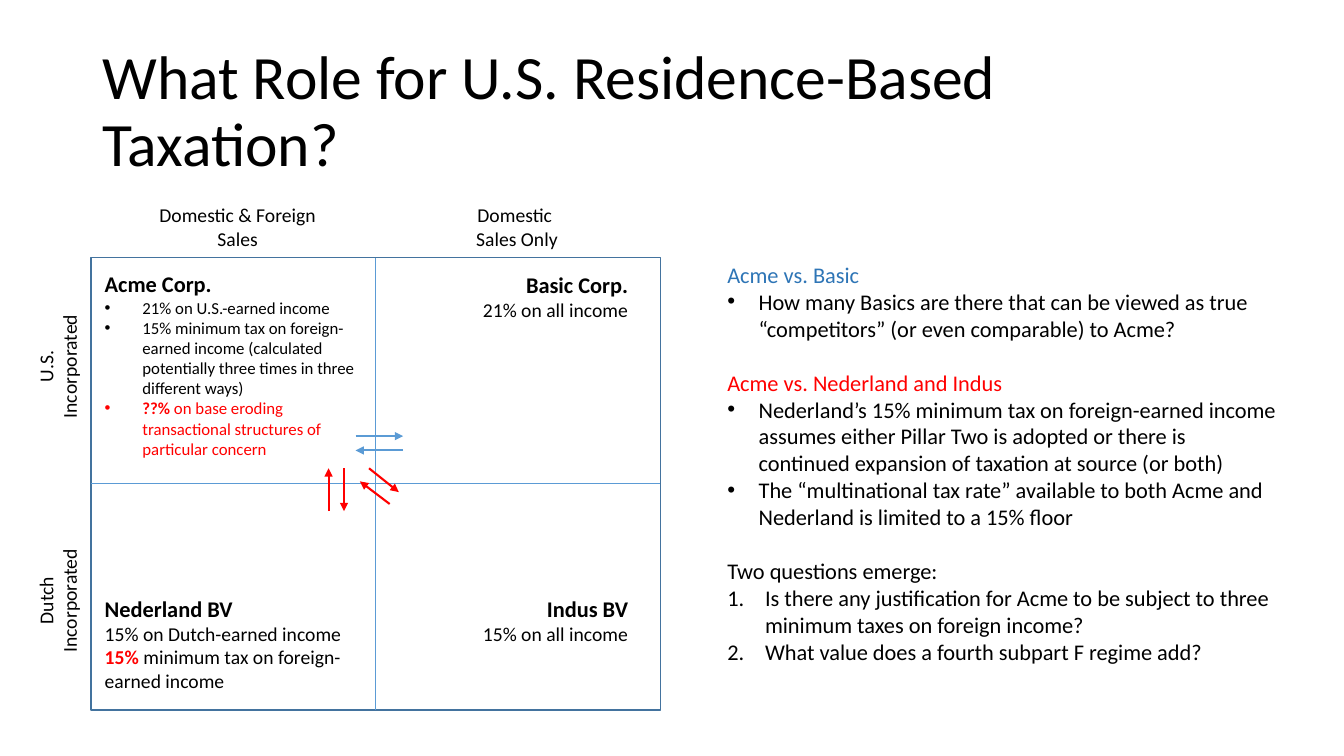
import pptx
import pptx.util
import pptx.dml.color
import pptx.enum.shapes
import pptx.enum.text
import pptx.oxml.ns
import lxml.etree

Cm, Pt = pptx.util.Cm, pptx.util.Pt
RGB = pptx.dml.color.RGBColor.from_string
ALIGN = pptx.enum.text.PP_ALIGN
qn = pptx.oxml.ns.qn
COLORS = {"black": "000000", "red": "FF0000", "heading": "2E75B6",
          "frame": "43739E", "blue": "5B9BD5"}
BULLETS = {"dot": ("a:buChar", "char", "•"),
           "number": ("a:buAutoNum", "type", "arabicPeriod")}

prs = pptx.Presentation()
prs.slide_width, prs.slide_height = Cm(33.87), Cm(19.05)
s = prs.slides.add_slide(prs.slide_layouts[6])


def add_text(left, top, width, height, paras, align=ALIGN.LEFT, wrap=True):
    """Each paragraph is (runs, bullet, indent, space before); a run is (text, size, colour, bold)."""
    box = s.shapes.add_textbox(Cm(left), Cm(top), Cm(width), Cm(height))
    tf = box.text_frame
    tf.word_wrap = wrap
    for i, (runs, bullet, indent, before) in enumerate(paras):
        p = tf.paragraphs[0] if i == 0 else tf.add_paragraph()
        p.alignment = align
        p.space_before = Pt(before)
        if bullet:
            pPr = p._p.get_or_add_pPr()
            pPr.set("marL", str(Cm(indent)))
            pPr.set("indent", str(-Cm(indent)))
            if bullet == "dot":
                lxml.etree.SubElement(pPr, qn("a:buFont")).set("typeface", "Arial")
            tag, key, value = BULLETS[bullet]
            lxml.etree.SubElement(pPr, qn(tag)).set(key, value)
        for text, size, color, bold in runs:
            r = p.add_run()
            r.text = text
            r.font.name = "Calibri"
            r.font.size = Pt(size)
            r.font.bold = bold
            r.font.color.rgb = RGB(COLORS[color])
    return box


def add_line(x1, y1, x2, y2, color, width, arrow=False):
    line = s.shapes.add_connector(pptx.enum.shapes.MSO_CONNECTOR.STRAIGHT,
                                  Cm(x1), Cm(y1), Cm(x2), Cm(y2))
    line.line.color.rgb = RGB(COLORS[color])
    line.line.width = Pt(width)
    if arrow:
        ln = line.line._get_or_add_ln()
        lxml.etree.SubElement(ln, qn("a:tailEnd")).set("type", "triangle")
    lxml.etree.SubElement(line._element.spPr, qn("a:effectLst"))


# Title
title = add_text(2.33, 1.01, 29.21, 3.68, [
    ([("What Role for U.S. Residence-Based Taxation?", 44, "black", False)], None, 0, 0)])
title.text_frame.vertical_anchor = pptx.enum.text.MSO_ANCHOR.MIDDLE
title.text_frame.paragraphs[0].line_spacing = 0.9

# Two by two frame
left, top, width, height = 2.29, 6.49, 14.35, 11.4
mid_x, mid_y = 9.45, top + height / 2
frame = s.shapes.add_shape(pptx.enum.shapes.MSO_SHAPE.RECTANGLE,
                           Cm(left), Cm(top), Cm(width), Cm(height))
frame.shadow.inherit = False
frame.fill.background()
frame.line.color.rgb = RGB(COLORS["frame"])
frame.line.width = Pt(1)
add_line(mid_x, top, mid_x, top + height, "blue", 0.5)
add_line(left, mid_y, left + width, mid_y, "blue", 0.5)

# Column and row headings
for x, y, w, rotation, lines in [
        (11.73, 5.0, 2.6, 0, ("Domestic ", "Sales Only")),
        (3.74, 5.0, 4.5, 0, ("Domestic & Foreign", "Sales")),
        (-0.75, 8.51, 4.4, 270, ("U.S.", "Incorporated")),
        (-0.75, 14.41, 4.4, 270, ("Dutch", "Incorporated"))]:
    heading = add_text(x, y, w, 1.45,
                       [([(t, 14, "black", False)], None, 0, 0) for t in lines],
                       ALIGN.CENTER, wrap=rotation != 0)
    heading.rotation = rotation

# Companies with domestic sales only
for y, name, rate in [(6.71, "Basic Corp.", "21% on all income"),
                      (14.88, "Indus BV", "15% on all income")]:
    add_text(10.92, y, 5.16, 1.54, [
        ([(name, 16, "black", True)], None, 0, 0),
        ([(rate, 14, "black", False)], None, 0, 0)], ALIGN.RIGHT)

# Companies with domestic and foreign sales
add_text(2.39, 6.69, 6.81, 5.05, [
    ([("Acme Corp.", 16, "black", True)], None, 0, 0),
    ([("21% on U.S.-earned income", 12, "black", False)], "dot", 0.95, 0),
    ([("15% minimum tax on foreign-earned income (calculated potentially "
       "three times in three different ways)", 12, "black", False)], "dot", 0.95, 0),
    ([("??%", 12, "red", True),
      (" on base eroding transactional structures of particular concern",
       12, "red", False)], "dot", 0.95, 0)])
add_text(2.39, 14.86, 6.53, 2.74, [
    ([("Nederland BV", 16, "black", True)], None, 0, 0),
    ([("15% on Dutch-earned income", 14, "black", False)], None, 0, 0),
    ([("15%", 14, "red", True),
      (" minimum tax on foreign-", 14, "black", False)], None, 0, 0),
    ([("earned income", 14, "black", False)], None, 0, 0)], wrap=False)

# Discussion on the right
gap = 19.5
discussion = [
    ("Acme vs. Basic", "heading", None, 0, 0),
    ("How many Basics are there that can be viewed as true “competitors” "
     "(or even comparable) to Acme?", "black", "dot", 0.79, 0),
    ("Acme vs. Nederland and Indus", "red", None, 0, gap),
    ("Nederland’s 15% minimum tax on foreign-earned income assumes either "
     "Pillar Two is adopted or there is continued expansion of taxation at "
     "source (or both)", "black", "dot", 0.79, 0),
    ("The “multinational tax rate” available to both Acme and Nederland is "
     "limited to a 15% floor", "black", "dot", 0.79, 0),
    ("Two questions emerge:", "black", None, 0, gap),
    ("Is there any justification for Acme to be subject to three minimum "
     "taxes on foreign income?", "black", "number", 0.95, 0),
    ("What value does a fourth subpart F regime add?", "black", "number", 0.95, 0)]
add_text(18.08, 6.45, 14.4, 10.52,
         [([(text, 16, color, False)], bullet, indent, before)
          for text, color, bullet, indent, before in discussion])

# Comparison arrows
for x1, y1, x2, y2, color in [
        (8.96, 10.99, 10.16, 10.99, "blue"),
        (10.16, 11.35, 8.96, 11.35, "blue"),
        (8.67, 11.8, 8.67, 12.88, "red"),
        (8.28, 12.88, 8.28, 11.8, "red"),
        (9.3, 11.8, 10.05, 12.4, "red"),
        (9.82, 12.7, 9.07, 12.13, "red")]:
    add_line(x1, y1, x2, y2, color, 1.5, arrow=True)

prs.save("out.pptx")
